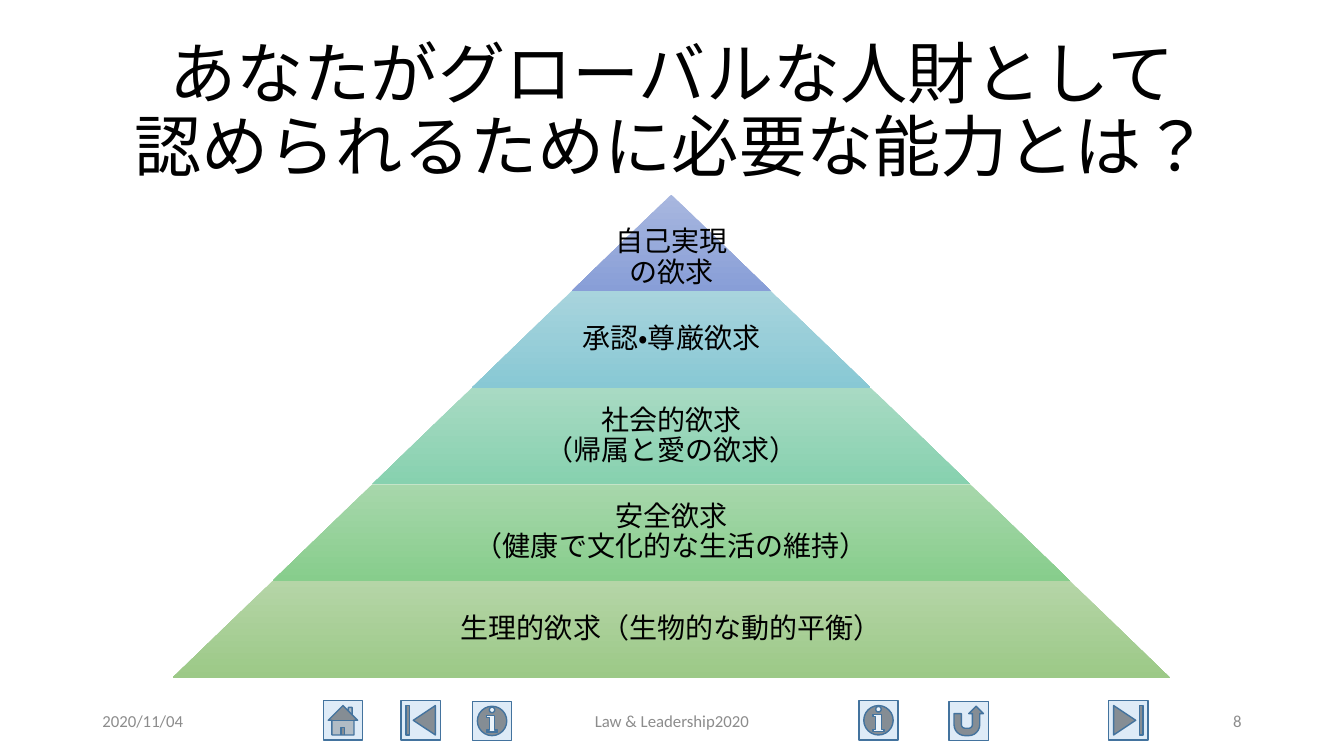
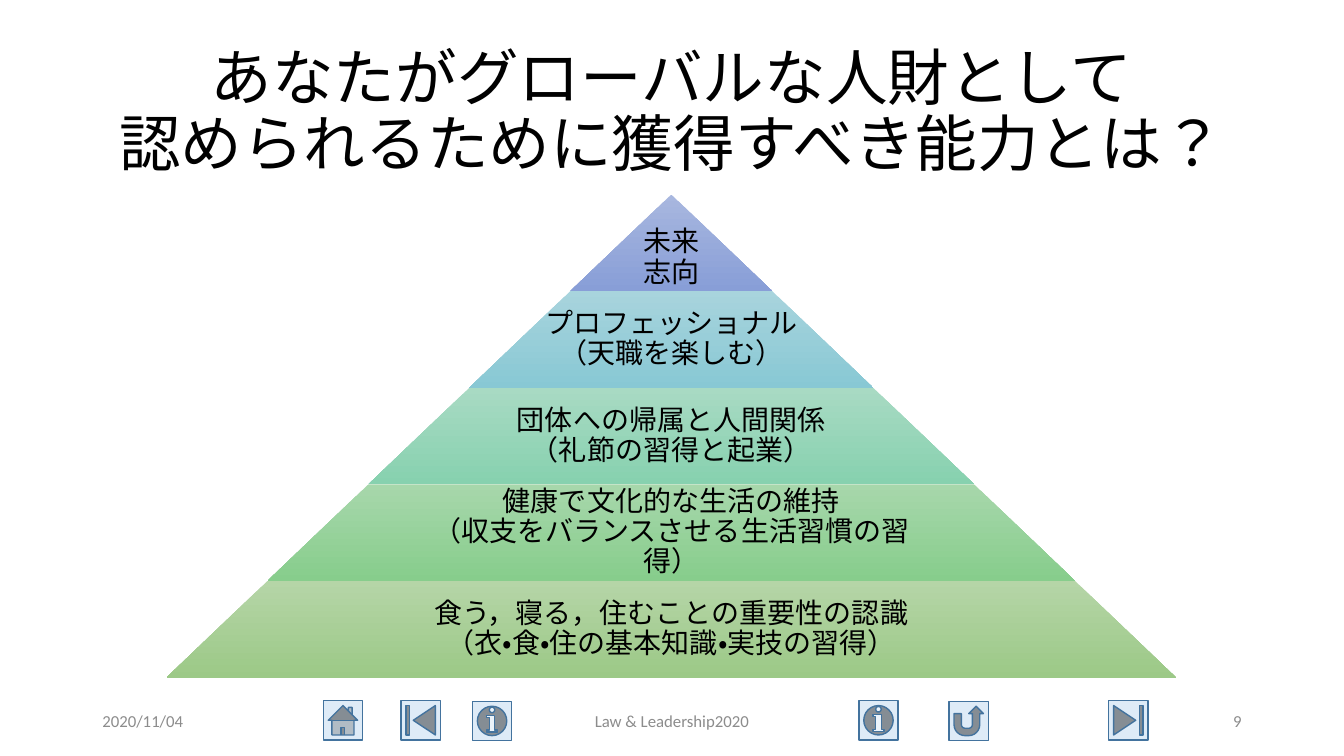
import pptx
import pptx.dml.color
import pptx.enum.lang
import pptx.enum.shapes
import pptx.enum.text
import pptx.util

Pt = pptx.util.Pt
SHAPES = pptx.enum.shapes.MSO_SHAPE
ALIGN = pptx.enum.text.PP_ALIGN
MIDDLE = pptx.enum.text.MSO_ANCHOR.MIDDLE

COLORS = {
    "text": "000000",
    "footer": "8C8C8C",
    "button_fill": "DEEBF7",
    "button_line": "43739E",
}
TIER_GRADIENTS = [
    ("A8B7DF", "889ED7"),
    ("A8D4DD", "88C8D4"),
    ("A8DAC3", "87D1AF"),
    ("A7D7AB", "87CD8C"),
    ("B5D5A7", "9CC987"),
]
FONT = "Calibri"
TITLE_BOX = (66, 28.8, 828, 104.4)
FOOTER_BOX = (66, 500.5, 828, 28.8)
PYRAMID_CENTER, PYRAMID_TOP, PYRAMID_HEIGHT = 479.5, 139, 345
LABEL_SHARE = 0.65
LABEL_SIZE = 20
LABEL_LINE = 21.5
LABEL_INSET = 2
BUTTON_SIZE = 28
BUTTONS = [
    (SHAPES.ACTION_BUTTON_HOME, 165, 0),
    (SHAPES.ACTION_BUTTON_BEGINNING, 220.5, 0),
    (SHAPES.ACTION_BUTTON_INFORMATION, 271.5, 0.5),
    (SHAPES.ACTION_BUTTON_INFORMATION, 547.5, 0),
    (SHAPES.ACTION_BUTTON_RETURN, 612, 0.5),
    (SHAPES.ACTION_BUTTON_END, 726, 0),
]
DATE = "2020/11/04"
COURSE = "Law & Leadership2020"

SLIDES = [
    {
        "title": "あなたがグローバルな人財として\n認められるために必要な能力とは？",
        "title_size": 48,
        "number": 8,
        "base_width": 712,
        "tiers": [
            "自己実現\nの欲求",
            "承認・尊厳欲求",
            "社会的欲求\n（帰属と愛の欲求）",
            "安全欲求\n（健康で文化的な生活の維持）",
            "生理的欲求（生物的な動的平衡）",
        ],
    },
    {
        "title": "あなたがグローバルな人財として\n認められるために獲得すべき能力とは？",
        "title_size": 44,
        "number": 9,
        "base_width": 721,
        "tiers": [
            "未来\n志向",
            "プロフェッショナル\n（天職を楽しむ）",
            "団体への帰属と人間関係\n（礼節の習得と起業）",
            "健康で文化的な生活の維持\n（収支をバランスさせる生活習慣の習得）",
            "食う，寝る，住むことの重要性の認識\n（衣・食・住の基本知識・実技の習得）",
        ],
    },
]


def rgb(value):
    return pptx.dml.color.RGBColor.from_string(value)


def points(box):
    return [Pt(length) for length in box]


def write(frame, text, size, color="text", align=ALIGN.CENTER, spacing=None):
    frame.word_wrap = True
    frame.auto_size = pptx.enum.text.MSO_AUTO_SIZE.NONE
    frame.vertical_anchor = MIDDLE
    paragraph = frame.paragraphs[0]
    paragraph.text = text
    paragraph.alignment = align
    paragraph.line_spacing = spacing
    for run in paragraph.runs:
        run.font.name = FONT
        run.font.size = Pt(size)
        run.font.color.rgb = rgb(COLORS[color])
        run.font.language_id = pptx.enum.lang.MSO_LANGUAGE_ID.JAPANESE


def place_title(slide, box, text, size):
    title = slide.shapes.title
    title.left, title.top, title.width, title.height = points(box)
    write(title.text_frame, text, size, spacing=0.9)


def add_buttons(slide, box):
    left, top = box[:2]
    for kind, across, down in BUTTONS:
        button = slide.shapes.add_shape(
            kind, *points((left + across, top + down, BUTTON_SIZE, BUTTON_SIZE)))
        button.shadow.inherit = False
        button.fill.solid()
        button.fill.fore_color.rgb = rgb(COLORS["button_fill"])
        button.line.color.rgb = rgb(COLORS["button_line"])
        button.line.width = Pt(1)


def add_footer(slide, box, number):
    left, top, width, height = box
    side, middle = 216, 324
    parts = [
        (DATE, left, side, ALIGN.LEFT),
        (COURSE, left + (width - middle) / 2, middle, ALIGN.CENTER),
        (str(number), left + width - side, side, ALIGN.RIGHT),
    ]
    for text, part_left, part_width, align in parts:
        part = slide.shapes.add_textbox(*points((part_left, top, part_width, height)))
        write(part.text_frame, text, 12, color="footer", align=align)


def add_tier(slide, box, slope, gradient):
    tier = slide.shapes.add_shape(SHAPES.TRAPEZOID, *points(box))
    tier.adjustments[0] = slope
    tier.shadow.inherit = False
    tier.line.fill.background()
    tier.fill.gradient()
    tier.fill.gradient_angle = 270
    for stop, color in zip(tier.fill.gradient_stops, gradient):
        stop.color.rgb = rgb(color)


def add_label(slide, box, text, lowered):
    frame = slide.shapes.add_textbox(*points(box)).text_frame
    frame.margin_left = frame.margin_right = frame.margin_bottom = Pt(LABEL_INSET)
    frame.margin_top = Pt(LABEL_INSET + lowered)
    write(frame, text, LABEL_SIZE, spacing=0.9)


def add_pyramid(slide, box, labels):
    left, top, width, height = box
    tier_height = height / len(labels)
    step = width / len(labels)
    center = left + width / 2
    slope = step / 2 / tier_height
    for index, (text, gradient) in enumerate(zip(labels, TIER_GRADIENTS)):
        is_peak = index == 0
        tier_width = step * (index + 1)
        tier_top = top + tier_height * index
        label_width = tier_width * (1 if is_peak else LABEL_SHARE)
        add_tier(slide, (center - tier_width / 2, tier_top, tier_width, tier_height),
                 slope, gradient)
        add_label(slide, (center - label_width / 2, tier_top, label_width, tier_height),
                  text, LABEL_LINE if is_peak else 0)


def add_pyramid_slide(deck, content):
    slide = deck.slides.add_slide(deck.slide_layouts.get_by_name("Title Only"))
    width = content["base_width"]
    add_buttons(slide, FOOTER_BOX)
    place_title(slide, TITLE_BOX, content["title"], content["title_size"])
    add_footer(slide, FOOTER_BOX, content["number"])
    add_pyramid(slide, (PYRAMID_CENTER - width / 2, PYRAMID_TOP, width, PYRAMID_HEIGHT),
                content["tiers"])


def main():
    deck = pptx.Presentation()
    deck.slide_width, deck.slide_height = Pt(960), Pt(540)
    for content in SLIDES:
        add_pyramid_slide(deck, content)
    deck.save("out.pptx")


if __name__ == "__main__":
    main()
